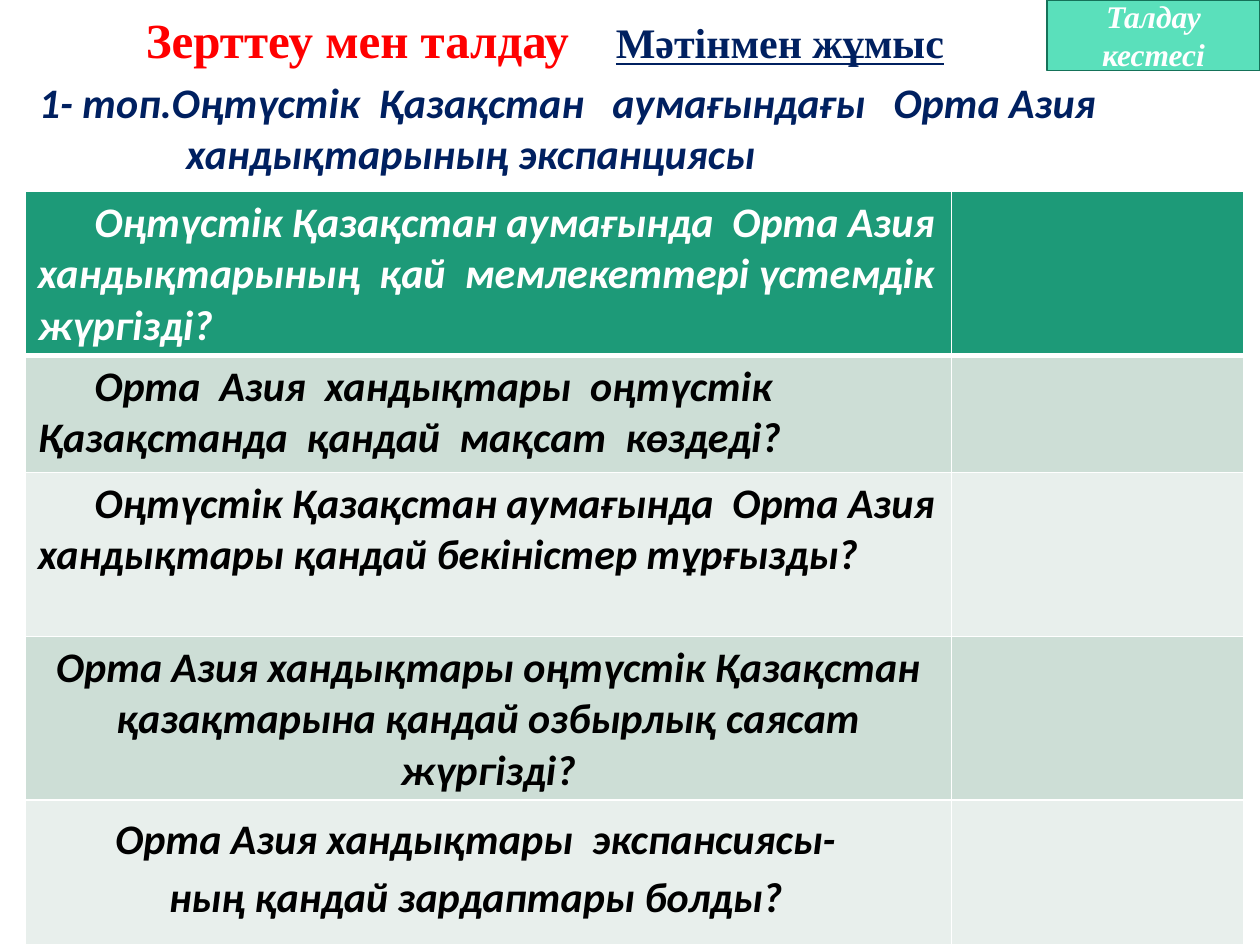
from dataclasses import dataclass
from typing import Any

from lxml import etree
from pptx import Presentation, util as u
from pptx.dml.color import RGBColor
from pptx.enum import shapes, text
from pptx.oxml.ns import qn

RED = RGBColor(0xFF, 0x00, 0x00)
NAVY = RGBColor(0x00, 0x20, 0x60)
WHITE = RGBColor(0xFF, 0xFF, 0xFF)
BLACK = RGBColor(0x00, 0x00, 0x00)
MINT = RGBColor(0x5A, 0xE0, 0xBB)
DARK_GREEN = RGBColor(0x15, 0x72, 0x59)
GREEN = RGBColor(0x1D, 0x9A, 0x78)
BANDS = (RGBColor(0xE8, 0xEF, 0xEC), RGBColor(0xCD, 0xDE, 0xD6))

LEFT, CENTER = text.PP_ALIGN.LEFT, text.PP_ALIGN.CENTER
SERIF = {"name": "Times New Roman", "bold": True}
SANS = {"name": "Calibri", "bold": True, "italic": True, "size": u.Pt(24)}
COLUMNS = (7.35, 2.32)


@dataclass
class Question:
    wording: str
    height: float
    align: Any = LEFT
    first_indent: float = 0
    margins: tuple[float, float] = (0.1, 0.1)
    line_spacing: float = 1


QUESTIONS = [
    Question("Оңтүстік Қазақстан аумағында  Орта Азия хандықтарының  қай  "
             "мемлекеттері үстемдік жүргізді?", 1.29, first_indent=0.45),
    Question("Орта  Азия  хандықтары  оңтүстік Қазақстанда  қандай  мақсат  "
             "көздеді?", 0.93, first_indent=0.45),
    Question("Оңтүстік Қазақстан аумағында  Орта Азия хандықтары қандай "
             "бекіністер тұрғызды?", 1.3, first_indent=0.45),
    Question("Орта Азия хандықтары оңтүстік Қазақстан қазақтарына қандай "
             "озбырлық саясат жүргізді?", 1.3, CENTER),
    Question("Орта Азия хандықтары  экспансиясы-ның қандай зардаптары болды?",
             1.15, CENTER, margins=(0.62, 0.82), line_spacing=1.15),
]


def add_span(para, wording: str, color: RGBColor, style: dict) -> None:
    span = para.add_run()
    span.text = wording
    for name, value in style.items():
        setattr(span.font, name, value)
    span.font.color.rgb = color


def add_box(page, left: float, top: float, width: float, height: float):
    box = page.shapes.add_textbox(*map(u.Inches, (left, top, width, height)))
    box.text_frame.word_wrap = True
    return box.text_frame


def set_border(cell, side: str, points: float) -> None:
    line = etree.SubElement(cell._tc.get_or_add_tcPr(), qn(f"a:{side}"),
                            w=str(u.Pt(points)))
    fill = etree.SubElement(line, qn("a:solidFill"))
    etree.SubElement(fill, qn("a:srgbClr"), val=str(WHITE))


def add_title(page) -> None:
    para = add_box(page, 1.06, 0.03, 7.2, 0.6).paragraphs[0]
    tabs = etree.SubElement(para._p.get_or_add_pPr(), qn("a:tabLst"))
    etree.SubElement(tabs, qn("a:tab"), pos=str(u.Inches(3.73)), algn="l")
    add_span(para, "Зерттеу мен талдау\t", RED, SERIF | {"size": u.Pt(28)})
    add_span(para, "Мәтінмен жұмыс", NAVY,
             SERIF | {"size": u.Pt(24), "underline": True})


def add_topic(page) -> None:
    frame = add_box(page, 0, 0.56, 9.06, 0.91)
    lines = (("1- топ.Оңтүстік  Қазақстан   аумағындағы   Орта Азия", 0.21),
             ("хандықтарының экспанциясы", 1.38))
    for number, (wording, indent) in enumerate(lines):
        para = frame.add_paragraph() if number else frame.paragraphs[0]
        para._p.get_or_add_pPr().set("marL", str(u.Inches(indent)))
        add_span(para, wording, NAVY, SANS)


def add_label(page) -> None:
    label = page.shapes.add_shape(shapes.MSO_SHAPE.RECTANGLE,
                                  *map(u.Inches, (8.31, 0, 1.69, 0.56)))
    label.shadow.inherit = False
    label.fill.solid()
    label.fill.fore_color.rgb = MINT
    label.line.color.rgb = DARK_GREEN
    label.line.width = u.Pt(1)
    label.text_frame.vertical_anchor = text.MSO_ANCHOR.MIDDLE
    para = label.text_frame.paragraphs[0]
    para.alignment = CENTER
    add_span(para, "Талдау кестесі", WHITE,
             SERIF | {"italic": True, "size": u.Pt(18)})


def add_questions(page) -> None:
    table = page.shapes.add_table(
        len(QUESTIONS), len(COLUMNS), u.Inches(0.2), u.Inches(1.52),
        u.Inches(sum(COLUMNS)),
        u.Inches(sum(question.height for question in QUESTIONS))).table
    for column, width in zip(table.columns, COLUMNS):
        column.width = u.Inches(width)
    for number, question in enumerate(QUESTIONS):
        row = table.rows[number]
        row.height = u.Inches(question.height)
        for cell in row.cells:
            # Borders come before the fill in the cell properties
            for side in ("lnL", "lnR", "lnT", "lnB"):
                heavy = (number, side) in ((0, "lnB"), (1, "lnT"))
                set_border(cell, side, 3 if heavy else 1)
            cell.fill.solid()
            cell.fill.fore_color.rgb = BANDS[number % 2] if number else GREEN
        cell = row.cells[0]
        cell.margin_left, cell.margin_right = map(u.Inches, question.margins)
        para = cell.text_frame.paragraphs[0]
        para.alignment = question.align
        para.line_spacing = question.line_spacing
        para._p.get_or_add_pPr().set(
            "indent", str(u.Inches(question.first_indent)))
        add_span(para, question.wording, BLACK if number else WHITE, SANS)


def main() -> None:
    deck = Presentation()
    deck.slide_width, deck.slide_height = u.Inches(10), u.Inches(7.5)
    page = deck.slides.add_slide(deck.slide_layouts[6])
    for add_part in (add_title, add_topic, add_label, add_questions):
        add_part(page)
    deck.save("out.pptx")


if __name__ == "__main__":
    main()
